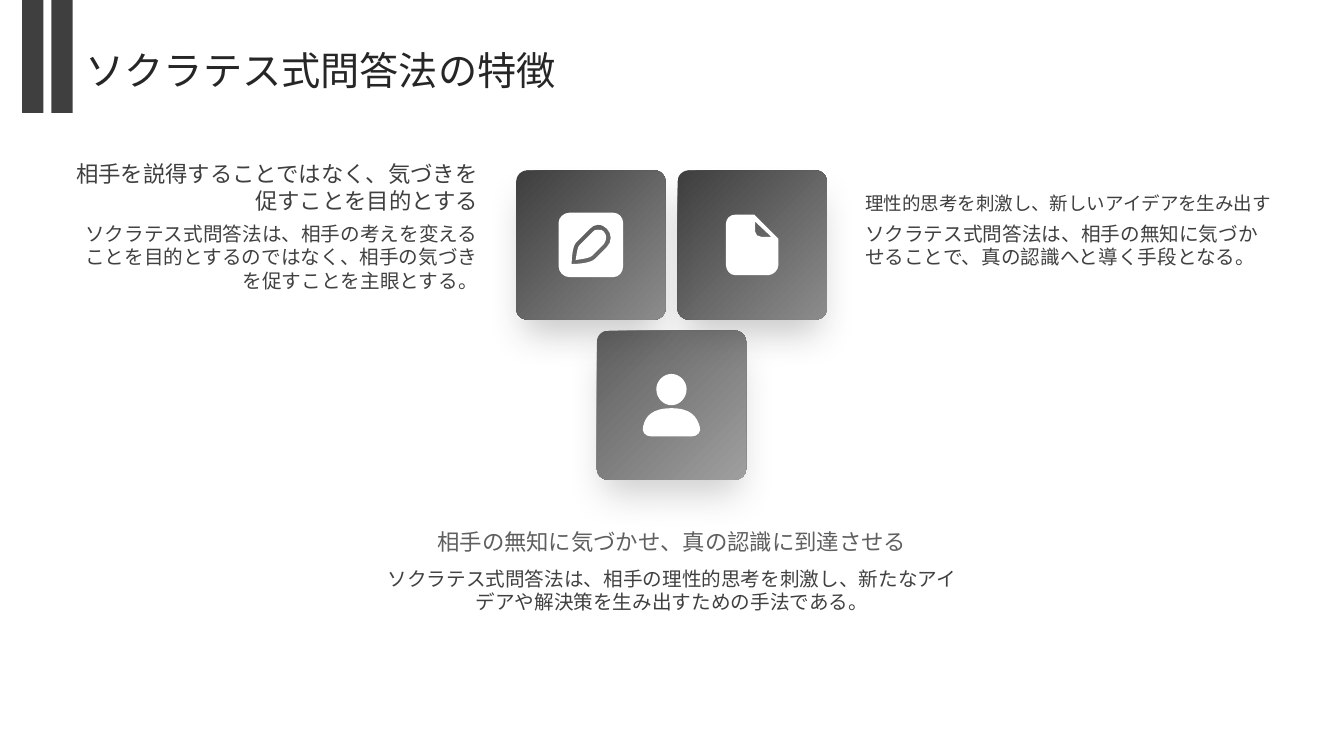
from dataclasses import dataclass

from lxml import etree
from pptx import Presentation
from pptx.dml.color import RGBColor
from pptx.enum.shapes import MSO_SHAPE
from pptx.enum.text import MSO_ANCHOR, MSO_AUTO_SIZE, PP_ALIGN
from pptx.oxml.ns import qn
from pptx.shapes.autoshape import Shape
from pptx.slide import Slide
from pptx.util import Inches, Pt

RECTANGLE = MSO_SHAPE.RECTANGLE
ROUNDED = MSO_SHAPE.ROUNDED_RECTANGLE
LEFT, CENTER, RIGHT = PP_ALIGN.LEFT, PP_ALIGN.CENTER, PP_ALIGN.RIGHT
TOP, MIDDLE, BOTTOM = MSO_ANCHOR.TOP, MSO_ANCHOR.MIDDLE, MSO_ANCHOR.BOTTOM
NO_AUTOFIT = MSO_AUTO_SIZE.NONE

FONT = "Cambria"
DARK, BODY, MEDIUM, WHITE = "3F3F3F", "404040", "5F5F5F", "FFFFFF"
TILE_SIZE = 1.48
TITLE_ONLY_LAYOUT = 5

Contour = list[tuple[float, ...]]


@dataclass
class Tile:
    """A gradient square with a white icon; each contour is a start, then lines and curves."""
    left: float
    top: float
    start_color: str
    end_color: str
    shadow_color: str
    icon: list[Contour]


@dataclass
class Caption:
    """A block of text with its place and format."""
    left: float
    top: float
    width: float
    height: float
    text: str
    size: float
    color: str
    alignment: PP_ALIGN
    anchor: MSO_ANCHOR
    wrap: bool = True


PERSON_ICON = [
    [(6.66, 4.05), (6.85, 4.05, 6.91, 4.13, 6.94, 4.23), (6.96, 4.28, 6.92, 4.33, 6.86, 4.33),
     (6.46, 4.33), (6.4, 4.33, 6.36, 4.28, 6.38, 4.23), (6.4, 4.13, 6.47, 4.05, 6.66, 4.05)],
    [(6.66, 3.71), (6.74, 3.71, 6.81, 3.78, 6.81, 3.86), (6.81, 3.95, 6.74, 4.02, 6.66, 4.02),
     (6.58, 4.02, 6.51, 3.95, 6.51, 3.86), (6.51, 3.78, 6.58, 3.71, 6.66, 3.71)],
]
DOCUMENT_ICON = [
    [(7.49, 2.2), (7.49, 2.3), (7.49, 2.33, 7.52, 2.35, 7.55, 2.35), (7.65, 2.35)],
    [(7.29, 2.13), (7.48, 2.13), (7.49, 2.14), (7.71, 2.36), (7.72, 2.37), (7.72, 2.63),
     (7.72, 2.68, 7.67, 2.73, 7.62, 2.73), (7.29, 2.73), (7.24, 2.73, 7.2, 2.68, 7.2, 2.63),
     (7.2, 2.22), (7.2, 2.17, 7.24, 2.13, 7.29, 2.13)],
]
PEN_ICON = [
    [(5.93, 2.28), (5.96, 2.28, 5.98, 2.28, 5.99, 2.3), (6.02, 2.33, 6.02, 2.38, 5.99, 2.42),
     (5.87, 2.54), (5.85, 2.56, 5.78, 2.57, 5.71, 2.58), (5.72, 2.51, 5.73, 2.44, 5.75, 2.43),
     (5.88, 2.3), (5.89, 2.28, 5.91, 2.28, 5.93, 2.28)],
    [(5.93, 2.23), (5.9, 2.23, 5.87, 2.25, 5.85, 2.27), (5.72, 2.4),
     (5.67, 2.44, 5.67, 2.62, 5.67, 2.62), (5.67, 2.62, 5.85, 2.62, 5.9, 2.57), (6.02, 2.45),
     (6.07, 2.4, 6.07, 2.32, 6.02, 2.27), (6, 2.25, 5.97, 2.23, 5.93, 2.23)],
    [(5.65, 2.11), (6.08, 2.11), (6.14, 2.11, 6.18, 2.16, 6.18, 2.21), (6.18, 2.64),
     (6.18, 2.7, 6.14, 2.75, 6.08, 2.75), (5.65, 2.75), (5.59, 2.75, 5.54, 2.7, 5.54, 2.64),
     (5.54, 2.21), (5.54, 2.16, 5.59, 2.11, 5.65, 2.11)],
]
TILES = [
    Tile(5.92, 3.28, MEDIUM, "9F9F9F", "474747", PERSON_ICON),
    Tile(6.72, 1.69, DARK, "8C8C8C", "2F2F2F", DOCUMENT_ICON),
    Tile(5.12, 1.69, DARK, "8C8C8C", "2F2F2F", PEN_ICON),
]
TITLE = Caption(0.85, 0.44, 11.67, 0.51, "ソクラテス式問答法の特徴", 28, "262626", LEFT, MIDDLE)
CAPTIONS = [
    Caption(0.72, 1.24, 4.02, 0.88, "相手を説得することではなく、気づきを促すことを目的とする",
            16, DARK, RIGHT, BOTTOM),
    Caption(8.58, 1.24, 4.02, 0.88, "理性的思考を刺激し、新しいアイデアを生み出す",
            13.2, DARK, LEFT, BOTTOM, wrap=False),
    Caption(0.72, 2.2, 4.02, 1.18,
            "ソクラテス式問答法は、相手の考えを変えることを目的とするのではなく、"
            "相手の気づきを促すことを主眼とする。", 14, BODY, RIGHT, TOP),
    Caption(3.82, 4.92, 5.69, 0.59, "相手の無知に気づかせ、真の認識に到達させる",
            16, MEDIUM, CENTER, BOTTOM),
    Caption(3.82, 5.62, 5.69, 1.18,
            "ソクラテス式問答法は、相手の理性的思考を刺激し、"
            "新たなアイデアや解決策を生み出すための手法である。", 14, BODY, CENTER, TOP),
    Caption(8.58, 2.2, 4.02, 1.18,
            "ソクラテス式問答法は、相手の無知に気づかせることで、真の認識へと導く手段となる。",
            14, BODY, LEFT, TOP),
]
BAR_LEFTS = [0.51, 0.22]


def rgb(color: str) -> RGBColor:
    """Turn a hex string into a colour."""
    return RGBColor.from_string(color)


def set_attributes(target: object, values: dict[str, object]) -> None:
    """Set every named attribute on the target."""
    for name, value in values.items():
        setattr(target, name, value)


def fill_plain(shape: Shape, color: str) -> None:
    """Fill a shape with one colour, without line or shadow."""
    shape.fill.solid()
    shape.fill.fore_color.rgb = rgb(color)
    shape.line.fill.background()
    shape.shadow.inherit = False


def bend_curves(shape: Shape, contours: list[Contour]) -> None:
    """Join the three lines of each curved segment into one cubic curve."""
    lines = iter(list(shape._element.spPr.iter(qn("a:lnTo"))))
    for contour in contours:
        for segment in contour[1:]:
            first = next(lines)
            if len(segment) == 6:
                first.addprevious(curve := etree.Element(qn("a:cubicBezTo")))
                for line in (first, next(lines), next(lines)):
                    curve.append(line[0])
                    line.getparent().remove(line)


def add_icon(slide: Slide, contours: list[Contour]) -> None:
    """Draw all contours of an icon as one white freeform."""
    outlines = [[(Inches(x), Inches(y)) for segment in contour
                 for x, y in zip(segment[::2], segment[1::2])] for contour in contours]
    builder = slide.shapes.build_freeform(*outlines[0][0])
    for index, outline in enumerate(outlines):
        if index:
            builder.move_to(*outline[0])
        builder.add_line_segments(outline[1:], close=True)
    shape = builder.convert_to_shape()
    bend_curves(shape, contours)
    fill_plain(shape, WHITE)


def add_shadow(shape: Shape, color: str) -> None:
    """Add a soft shadow below a shape."""
    effects = shape._element.spPr.find(qn("a:effectLst"))
    shadow = etree.SubElement(effects, qn("a:outerShdw"), blurRad=str(Pt(26)), dist=str(Pt(15)),
                              dir="5400000", sx="90000", sy="90000", algn="ctr",
                              rotWithShape="0")
    shadow_color = etree.SubElement(shadow, qn("a:srgbClr"), val=color)
    etree.SubElement(shadow_color, qn("a:alpha"), val="25000")


def add_tile(slide: Slide, tile: Tile) -> None:
    """Draw a gradient tile and its icon."""
    shape = slide.shapes.add_shape(ROUNDED, Inches(tile.left), Inches(tile.top),
                                   Inches(TILE_SIZE), Inches(TILE_SIZE))
    shape.adjustments[0] = 0.075
    fill_plain(shape, tile.start_color)
    shape.fill.gradient()
    shape.fill.gradient_angle = 315
    stops = zip(shape.fill.gradient_stops, (tile.start_color, tile.end_color), (0.01, 1))
    for stop, color, position in stops:
        stop.color.rgb = rgb(color)
        stop.position = position
    add_shadow(shape, tile.shadow_color)
    add_icon(slide, tile.icon)


def write_caption(shape: Shape, caption: Caption) -> None:
    """Place a text shape and fill it with formatted text."""
    set_attributes(shape, {name: Inches(getattr(caption, name))
                           for name in ("left", "top", "width", "height")})
    frame = shape.text_frame
    set_attributes(frame, {
        "margin_left": 0, "margin_right": 0, "margin_top": 0, "margin_bottom": 0,
        "auto_size": NO_AUTOFIT, "word_wrap": caption.wrap, "vertical_anchor": caption.anchor})
    paragraph = frame.paragraphs[0]
    paragraph.alignment = caption.alignment
    run = paragraph.add_run()
    run.text = caption.text
    set_attributes(run.font, {"name": FONT, "size": Pt(caption.size)})
    run.font.color.rgb = rgb(caption.color)


def main() -> None:
    """Build and save the slide."""
    presentation = Presentation()
    set_attributes(presentation, {"slide_width": Inches(13.33), "slide_height": Inches(7.5)})
    slide = presentation.slides.add_slide(presentation.slide_layouts[TITLE_ONLY_LAYOUT])
    write_caption(slide.shapes.title, TITLE)
    for tile in TILES:
        add_tile(slide, tile)
    for caption in CAPTIONS:
        write_caption(slide.shapes.add_textbox(0, 0, 0, 0), caption)
    for left in BAR_LEFTS:
        bar = slide.shapes.add_shape(RECTANGLE, Inches(left), 0, Inches(0.21), Inches(1.12))
        fill_plain(bar, DARK)
    presentation.save("out.pptx")


if __name__ == "__main__":
    main()
